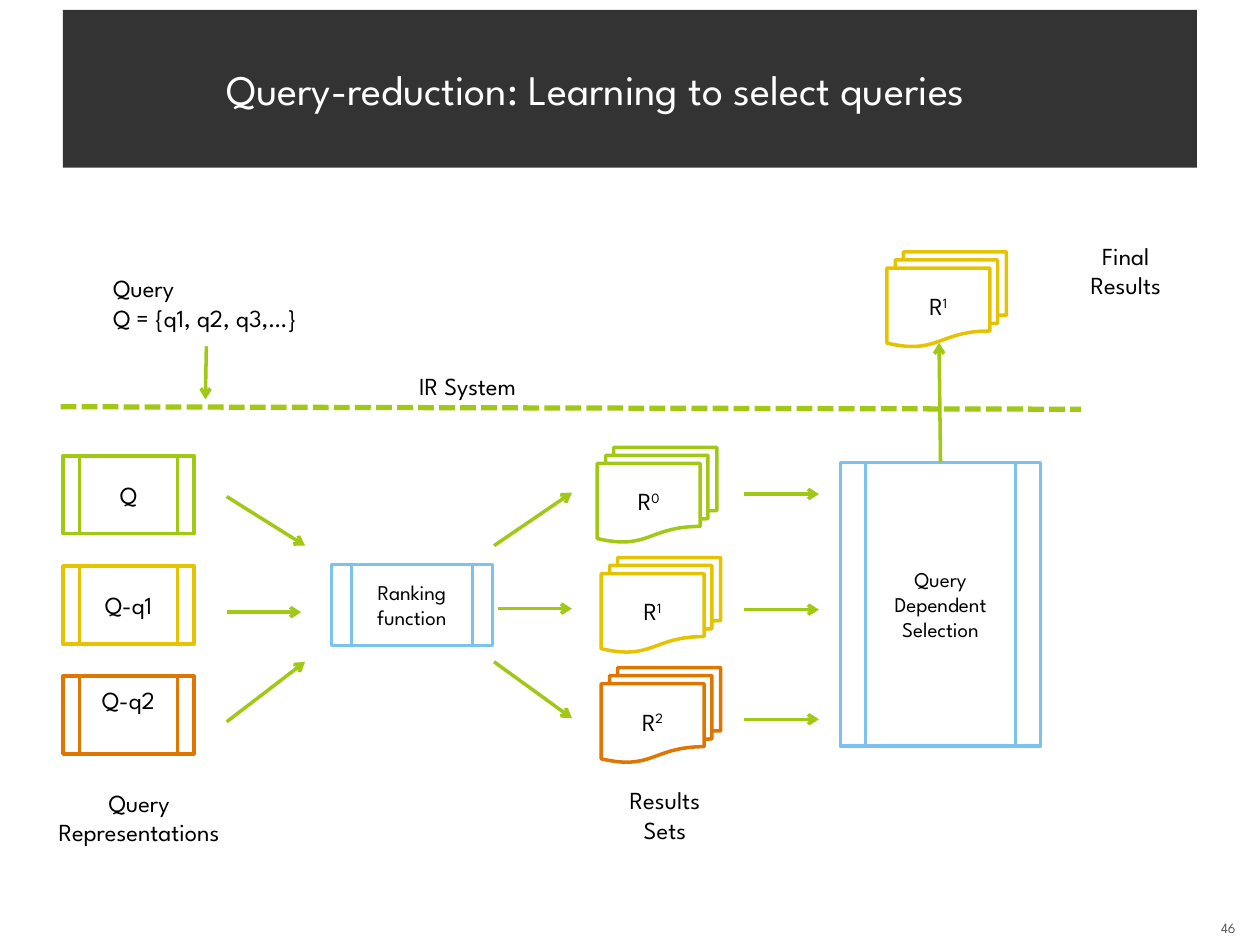
import pptx
import pptx.util
import pptx.dml.color
import pptx.enum.dml
import pptx.enum.shapes
import pptx.enum.text
import pptx.oxml
from dataclasses import dataclass
from pptx.util import Cm

SHAPE = pptx.enum.shapes.MSO_SHAPE
ALIGN = pptx.enum.text.PP_ALIGN
ANCHOR = pptx.enum.text.MSO_ANCHOR


@dataclass(frozen=True)
class Theme:
    font: str = "League Spartan"
    black: str = "000000"
    white: str = "FFFFFF"
    dark: str = "333333"
    gray: str = "595959"
    green: str = "A2C816"
    yellow: str = "E4C402"
    orange: str = "E07602"
    blue: str = "7DC1EF"
    title: int = 24
    body: int = 14
    small: int = 12
    tiny: int = 8
    stroke: int = 2


T = Theme()
ROW_COLORS = (T.green, T.yellow, T.orange)
ROW_PITCH = 2.22
DOC_SIZE = (2.41, 1.91)
LABEL_SIZE = (7.75, 1.45)


def rgb(color):
    return pptx.dml.color.RGBColor.from_string(color)


def write(sp, text, size=T.body, color=T.black, align=ALIGN.CENTER,
          anchor=ANCHOR.MIDDLE, insets=(0.25, 0.13, 0.25, 0.13)):
    """Fill a shape with text; a caret starts a superscript."""
    tf = sp.text_frame
    tf.word_wrap = True
    tf.vertical_anchor = anchor
    (tf.margin_left, tf.margin_top,
     tf.margin_right, tf.margin_bottom) = map(Cm, insets)
    for i, line in enumerate(text.split("\n")):
        p = tf.paragraphs[0] if i == 0 else tf.add_paragraph()
        p.alignment = align
        for j, part in enumerate(line.split("^")):
            r = p.add_run()
            r.text = part
            r.font.name = T.font
            r.font.size = pptx.util.Pt(size)
            r.font.color.rgb = rgb(color)
            if j:
                r._r.get_or_add_rPr().set("baseline", "30000")


def add_label(s, x, y, w, h, text, anchor=ANCHOR.TOP, **fmt):
    sp = s.shapes.add_textbox(Cm(x), Cm(y), Cm(w), Cm(h))
    write(sp, text, anchor=anchor, **fmt)


def add_box(s, kind, x, y, w, h, text, fill=T.white, line=None, **fmt):
    sp = s.shapes.add_shape(kind, Cm(x), Cm(y), Cm(w), Cm(h))
    sp.shadow.inherit = False
    sp.fill.solid()
    sp.fill.fore_color.rgb = rgb(fill)
    if line:
        sp.line.color.rgb = rgb(line)
        sp.line.width = pptx.util.Pt(T.stroke)
    else:
        sp.line.fill.background()
    write(sp, text, **fmt)


def add_line(s, x1, y1, x2, y2, width=T.stroke, dash=None, arrow=True):
    sp = s.shapes.add_connector(pptx.enum.shapes.MSO_CONNECTOR.STRAIGHT,
                                Cm(x1), Cm(y1), Cm(x2), Cm(y2))
    sp.line.color.rgb = rgb(T.green)
    sp.line.width = pptx.util.Pt(width)
    if dash:
        sp.line.dash_style = dash
    ns = pptx.oxml.ns.qn
    if arrow:
        tail = sp.line._get_or_add_ln().makeelement(ns("a:tailEnd"), {"type": "arrow"})
        sp.line._get_or_add_ln().append(tail)
    props = sp._element.spPr
    props.append(props.makeelement(ns("a:effectLst"), {}))


def add_header(s, x, y, w, h):
    add_box(s, SHAPE.RECTANGLE, x, y, w, h,
            "Query-reduction: Learning to select queries", fill=T.dark,
            size=T.title, color=T.white, align=ALIGN.LEFT,
            insets=(3.3, 0.13, 0.76, 0.13))


def add_query(s, x, y, w, h):
    add_label(s, x, y, w, h, "Query\nQ = {q1, q2, q3,…}", align=ALIGN.LEFT)
    add_line(s, x + 2.13, y + 1.6, x + 2.11, y + 2.67)


def add_boundary(s, x, y, w):
    """Dashed border of the system with its name above."""
    add_line(s, x, y, x + w, y + 0.05, width=3, arrow=False,
             dash=pptx.enum.dml.MSO_LINE.SQUARE_DOT)
    add_label(s, x + 6.98, y - 0.86, 5.11, 0.86, "IR System", align=ALIGN.LEFT)


def add_representations(s, x, y, w, h):
    """Query variants, one row each, with arrows into the ranking."""
    for i, (text, color) in enumerate(zip(("Q", "Q-q1", "Q-q2"), ROW_COLORS)):
        bottom = 0.73 if i == 2 else 0.13  # last text sits higher
        add_box(s, SHAPE.FLOWCHART_PREDEFINED_PROCESS, x, y + i * ROW_PITCH,
                w, h, text, line=color, insets=(0.25, 0.13, 0.25, bottom))
    add_label(s, x - 2.34, y + 6.56, *LABEL_SIZE, "Query\nRepresentations")
    for y1, x2, y2 in ((0.82, 4.88, 1.81), (3.15, 4.8, 3.15), (5.36, 4.88, 4.15)):
        add_line(s, x + 3.3, y + y1, x + x2, y + y2)


def add_ranking(s, x, y, w, h):
    """Ranking function with arrows out to the result sets."""
    add_box(s, SHAPE.FLOWCHART_PREDEFINED_PROCESS, x, y, w, h,
            "Ranking function", line=T.blue, size=T.small)
    for gap, y1, y2 in ((0.03, -0.38, -1.45), (0.1, 0.89, 0.89), (0.03, 1.96, 3.1)):
        add_line(s, x + w + gap, y + y1, x + w + 1.6, y + y2)


def add_results(s, x, y):
    """Result sets with arrows into the selection."""
    arrows = (0.94, 3.27, 5.48)
    for i, (color, dy) in enumerate(zip(ROW_COLORS, arrows)):
        shift = 0.08 if i else 0
        add_box(s, SHAPE.FLOWCHART_MULTIDOCUMENT, x + shift, y + i * ROW_PITCH,
                *DOC_SIZE, f"R^{i}", line=color)
        add_line(s, x + 2.95, y + dy, x + 4.47, y + dy)
    add_label(s, x - 2.51, y + 6.68, *LABEL_SIZE, "Results\nSets")


def add_selection(s, x, y, w, h):
    """Selection step and the final results above it."""
    add_box(s, SHAPE.FLOWCHART_PREDEFINED_PROCESS, x, y, w, h,
            "Query\nDependent\nSelection", line=T.blue, size=T.small)
    add_line(s, x + w / 2, y, x + w / 2 - 0.03, y - 2.41)
    add_box(s, SHAPE.FLOWCHART_MULTIDOCUMENT, x + 0.94, y - 4.24, *DOC_SIZE,
            "R^1", line=T.yellow)
    add_label(s, x + 1.88, y - 4.6, *LABEL_SIZE, "Final\nResults")


def main():
    prs = pptx.Presentation()
    prs.slide_width, prs.slide_height = Cm(25.4), Cm(19.05)
    s = prs.slides.add_slide(prs.slide_layouts[6])
    add_label(s, 24.13, 18.19, 1.27, 1.02, "46", anchor=ANCHOR.MIDDLE,
              size=T.tiny, color=T.gray)
    add_header(s, 1.27, 0.2, 22.86, 3.18)
    add_ranking(s, 6.68, 11.38, 3.25, 1.63)
    add_results(s, 12.04, 9.02)
    add_selection(s, 16.94, 9.32, 4.04, 5.72)
    add_query(s, 2.03, 5.38, 5.31, 1.45)
    add_boundary(s, 1.22, 8.2, 20.57)
    add_representations(s, 1.27, 9.19, 2.64, 1.57)
    prs.save("out.pptx")


if __name__ == "__main__":
    main()
